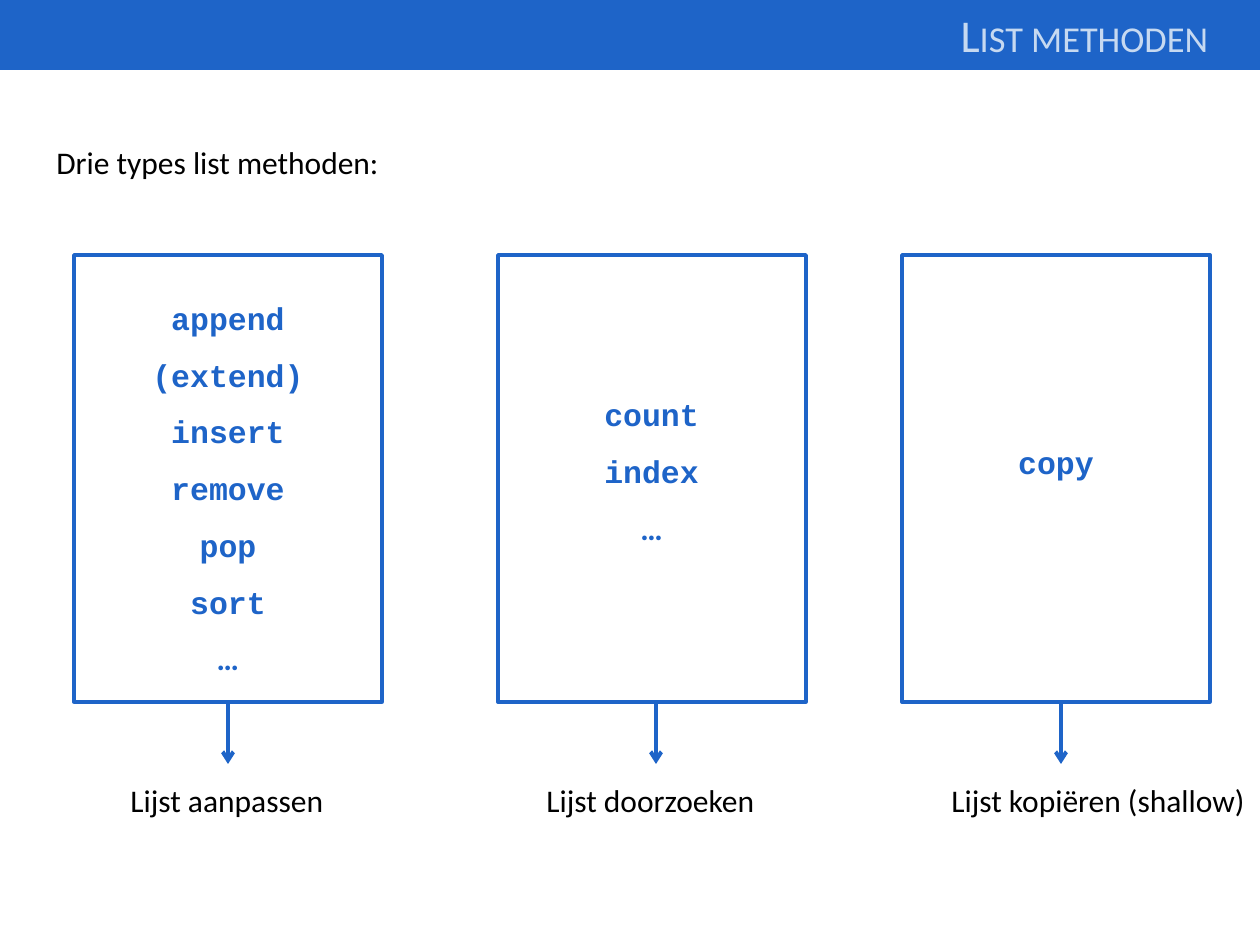
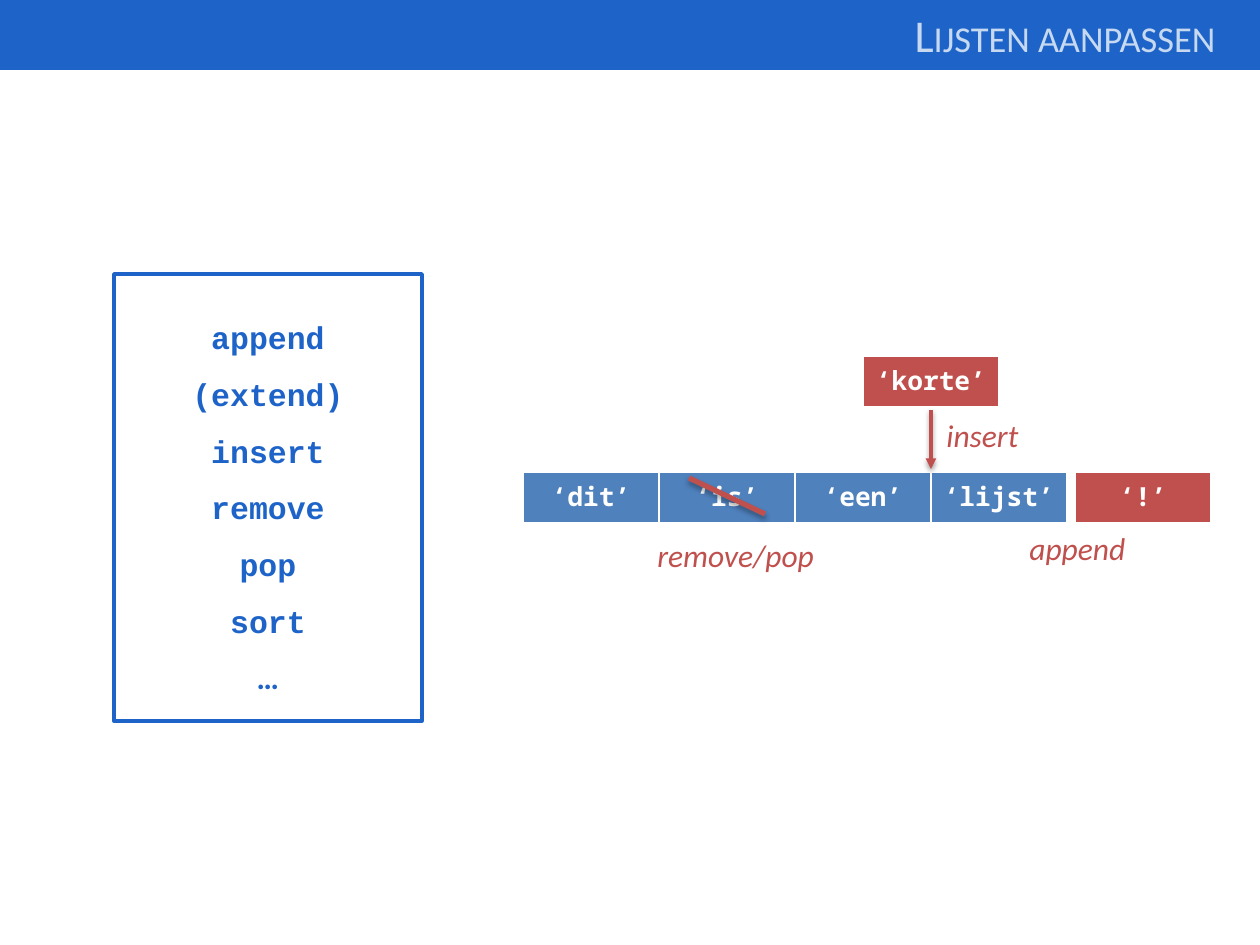
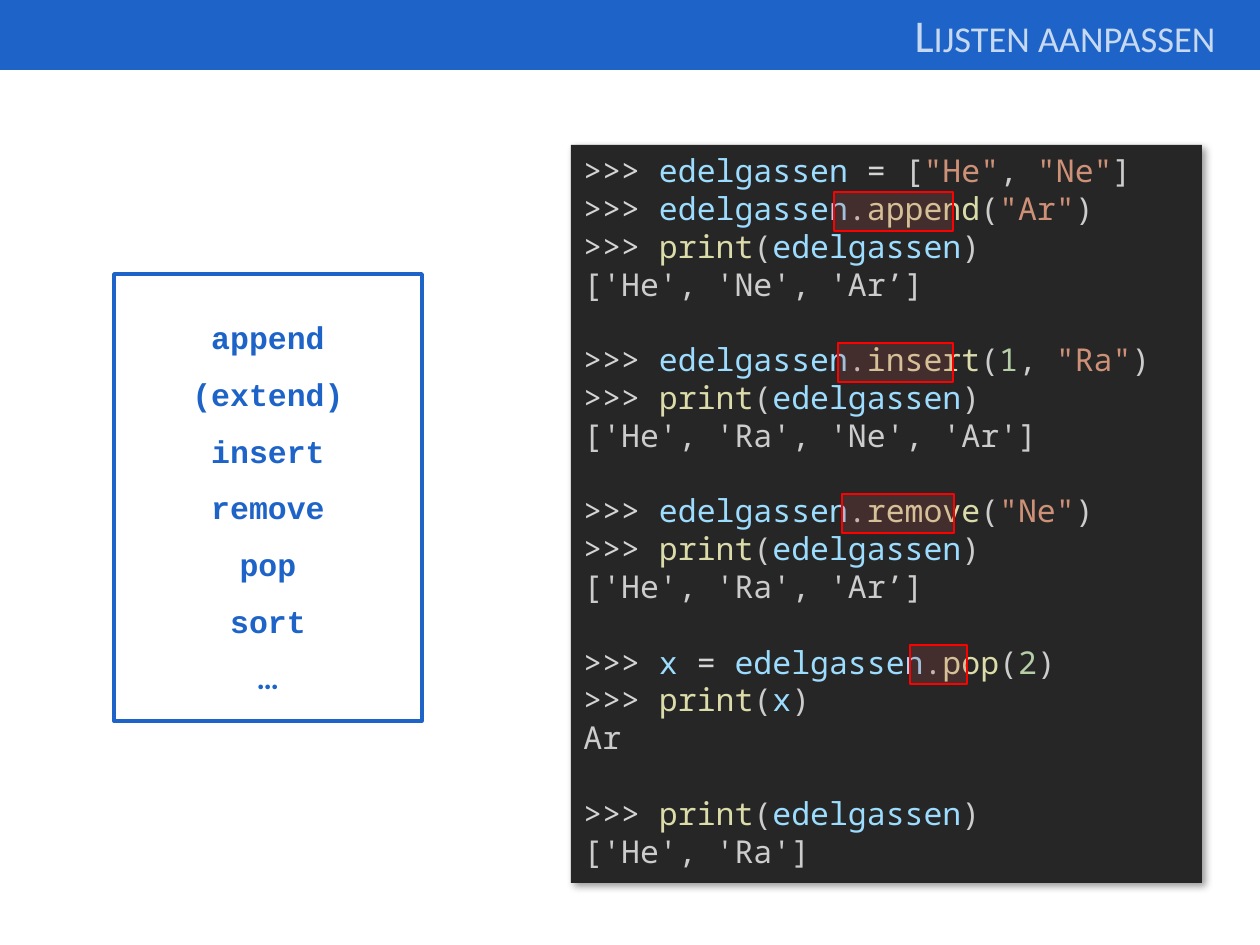
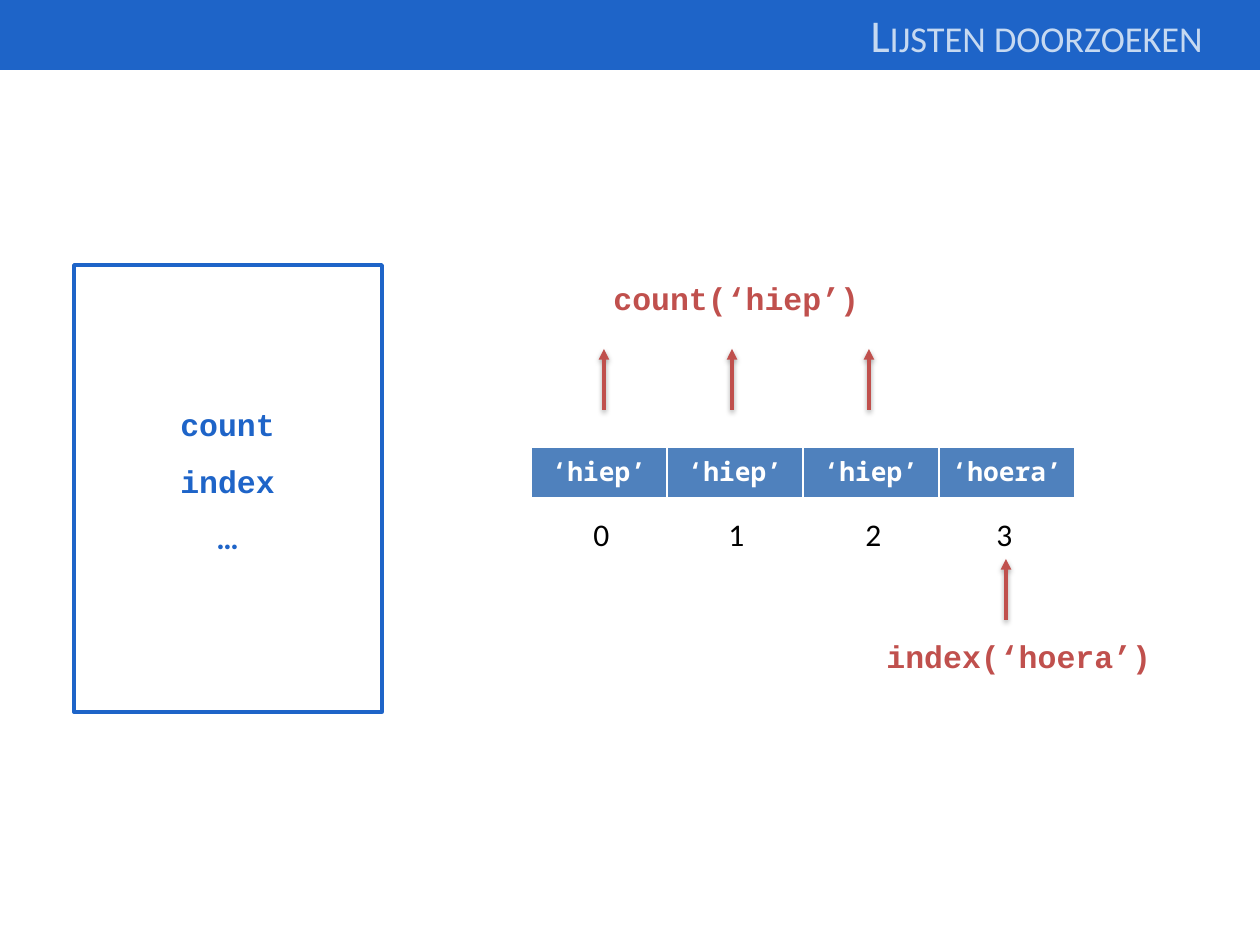
"""Builds four slides about Python list methods."""
from lxml.etree import SubElement
from pptx import Presentation
from pptx.dml.color import RGBColor
from pptx.enum.shapes import MSO_CONNECTOR, MSO_SHAPE
from pptx.enum.text import MSO_ANCHOR, MSO_AUTO_SIZE, PP_ALIGN
from pptx.oxml.ns import qn
from pptx.util import Emu, Pt

RECTANGLE = MSO_SHAPE.RECTANGLE
STRAIGHT = MSO_CONNECTOR.STRAIGHT
TOP = MSO_ANCHOR.TOP
FIT_SHAPE = MSO_AUTO_SIZE.SHAPE_TO_FIT_TEXT
NO_FIT = MSO_AUTO_SIZE.NONE
LEFT, CENTER = PP_ALIGN.LEFT, PP_ALIGN.CENTER

SCALE = 914400 / 126
SLIDE_WIDTH, SLIDE_HEIGHT = 1260, 945
TITLE_RIGHT = 1235
BOX_WIDTH, BOX_HEIGHT = 308, 447
CELL_WIDTH, CELL_HEIGHT = 136, 52
LABEL_HEIGHT = 50
BOTTOM_SITE = 2

BODY_FONT, METHOD_FONT, CODE_FONT = "Calibri", "Courier New", "Noto Sans Mono"
COLORS = {
    "blue": "1E64C8", "title": "C6D9F1", "black": "000000", "white": "FFFFFF",
    "cell": "4F81BD", "accent": "C0504D", "highlight": "FF0000", "panel": "262626",
    "prompt": "D4D4D4", "output": "CCCCCC", "variable": "9CDCFE",
    "function": "DCDCAA", "string": "CE9178", "number": "B5CEA8",
}
ARROW_SHADOW = {"alpha": 38, "blur": 3.1, "distance": 1.6, "angle": 90}
STRIKE_SHADOW = {"alpha": 35, "blur": 3.1, "distance": 1.8, "angle": 90}
PANEL_SHADOW = {"alpha": 40, "blur": 4, "distance": 3, "angle": 45}

ADAPT = {"names": ["append", "(extend)", "insert", "remove", "pop", "sort", "…"],
         "width": 178, "height": 407, "offset": 19}
SEARCH = {"names": ["count", "index", "…"], "width": 121, "height": 180, "offset": 115}
COPY = {"names": ["copy"], "width": 102, "height": 65, "offset": 163}


def px(length):
    """Turn whole pixels into EMU."""
    return Emu(round(length * SCALE))


def rgb(name):
    """Look up a colour by name."""
    return RGBColor.from_string(COLORS[name])


def write(frame, paragraphs, size=18, font=BODY_FONT, color="black", bold=False,
          italic=False, align=LEFT, line_spacing=None, around=0):
    """Write paragraphs, each a string or a list of (text, colour) runs."""
    for index, content in enumerate(paragraphs):
        paragraph = frame.add_paragraph() if index else frame.paragraphs[0]
        paragraph.alignment = align
        paragraph.line_spacing = line_spacing
        paragraph.space_before = paragraph.space_after = Pt(around)
        runs = [(content, color)] if isinstance(content, str) else content
        for text, run_color in runs:
            run = paragraph.add_run()
            run.text = text
            run.font.name = BODY_FONT if text == "…" else font
            run.font.size = Pt(size)
            run.font.bold = bold
            run.font.italic = italic
            run.font.color.rgb = rgb(run_color)


def set_shadow(shape, alpha, blur, distance, angle):
    """Put an outer shadow in the effect list of a shape."""
    effects = shape.element.spPr.find(qn("a:effectLst"))
    shadow = SubElement(effects, qn("a:outerShdw"), blurRad=str(Pt(blur)),
                        dist=str(Pt(distance)), dir=str(angle * 60000), rotWithShape="0")
    color = SubElement(shadow, qn("a:srgbClr"), val=COLORS["black"])
    SubElement(color, qn("a:alpha"), val=str(alpha * 1000))


def set_borders(cell):
    """Give a table cell white borders with a heavier bottom."""
    properties = cell._tc.get_or_add_tcPr()
    for side, width in (("L", 1), ("R", 1), ("T", 1), ("B", 3)):
        border = SubElement(properties, qn(f"a:ln{side}"), w=str(Pt(width)))
        fill = SubElement(border, qn("a:solidFill"))
        SubElement(fill, qn("a:srgbClr"), val=COLORS["white"])


class Deck:
    """Holds the presentation style and the current slide."""

    def __init__(self):
        """Start an empty presentation."""
        self.presentation = Presentation()
        self.presentation.slide_width = px(SLIDE_WIDTH)
        self.presentation.slide_height = px(SLIDE_HEIGHT)
        self.slide = None

    def add_slide(self, title, width):
        """Add a slide with the blue band and its title."""
        self.slide = self.presentation.slides.add_slide(self.presentation.slide_layouts[5])
        band = self.rectangle(0, 0, SLIDE_WIDTH, 68, fill="blue", line="blue")
        shape = self.slide.shapes.title
        shape.element.addprevious(band.element)
        shape.left, shape.top = px(TITLE_RIGHT - width), px(1)
        shape.width, shape.height = px(width), px(68)
        frame = shape.text_frame
        frame.vertical_anchor = TOP
        frame.auto_size = NO_FIT
        write(frame, [title], size=26, color="title")
        for properties in shape.element.iter(qn("a:rPr")):
            properties.set("cap", "small")

    def rectangle(self, left, top, width, height, fill=None, line=None, line_width=2,
                  alpha=None):
        """Add a rectangle without shadow."""
        shape = self.slide.shapes.add_shape(RECTANGLE, px(left), px(top), px(width), px(height))
        shape.shadow.inherit = False
        if fill:
            shape.fill.solid()
            shape.fill.fore_color.rgb = rgb(fill)
        else:
            shape.fill.background()
        if alpha:
            color = shape.element.spPr.find(qn("a:solidFill")).find(qn("a:srgbClr"))
            SubElement(color, qn("a:alpha"), val=str(alpha * 1000))
        if line:
            shape.line.color.rgb = rgb(line)
            shape.line.width = Pt(line_width)
        else:
            shape.line.fill.background()
        return shape

    def text(self, left, top, width, paragraphs, height=LABEL_HEIGHT, wrap=False, **style):
        """Add a text box."""
        shape = self.slide.shapes.add_textbox(px(left), px(top), px(width), px(height))
        shape.text_frame.word_wrap = wrap
        shape.text_frame.auto_size = FIT_SHAPE
        write(shape.text_frame, paragraphs, **style)

    def method_box(self, left, top, methods):
        """Add a framed list of method names."""
        width = methods["width"]
        self.text(left + (BOX_WIDTH - width) // 2, top + methods["offset"], width,
                  methods["names"], height=methods["height"], font=METHOD_FONT,
                  color="blue", bold=True, align=CENTER, line_spacing=1.5)
        return self.rectangle(left, top, BOX_WIDTH, BOX_HEIGHT, line="blue")

    def line(self, start, end, color="accent", width=2, head=None, shadow=None, source=None):
        """Add a straight line, joined to the bottom of a source if given."""
        connector = self.slide.shapes.add_connector(
            STRAIGHT, px(start[0]), px(start[1]), px(end[0]), px(end[1]))
        if source:
            connector.begin_connect(source, BOTTOM_SITE)
        connector.line.color.rgb = rgb(color)
        connector.line.width = Pt(width)
        properties = connector.element.spPr
        if head:
            SubElement(properties.find(qn("a:ln")), qn("a:tailEnd"), type=head)
        SubElement(properties, qn("a:effectLst"))
        if shadow:
            set_shadow(connector, **shadow)

    def accent_arrow(self, x, start, end):
        """Add a vertical red arrow."""
        self.line((x, start), (x, end), head="triangle", shadow=ARROW_SHADOW)

    def cells(self, left, top, words, fill="cell"):
        """Add a one-row table of list items."""
        table = self.slide.shapes.add_table(
            1, len(words), px(left), px(top), px(CELL_WIDTH * len(words)), px(CELL_HEIGHT)).table
        table.horz_banding = False
        for column, word in enumerate(words):
            table.columns[column].width = px(CELL_WIDTH)
            cell = table.cell(0, column)
            set_borders(cell)
            cell.fill.solid()
            cell.fill.fore_color.rgb = rgb(fill)
            write(cell.text_frame, [word], size=15, font=CODE_FONT, color="white",
                  bold=True, align=CENTER)

    def code(self, left, top, width, height, blocks):
        """Add a dark panel with blocks of code one line apart."""
        shape = self.rectangle(left, top, width, height, fill="panel")
        set_shadow(shape, **PANEL_SHADOW)
        frame = shape.text_frame
        frame.word_wrap = True
        frame.vertical_anchor = TOP
        write(frame, [line for block in blocks for line in block],
              font=CODE_FONT, color="output")
        first = 0
        for block in blocks[:-1]:
            first += len(block)
            frame.paragraphs[first].space_before = Pt(21.6)


PROMPT = (">>> ", "prompt")
GASES = ("edelgassen", "variable")
COMMA = (", ", "output")


def call(name, *arguments):
    """Return the runs of a function call."""
    return [(name, "function"), ("(", "output"), *arguments, (")", "output")]


def method_call(name, *arguments):
    """Return the runs of a method call on the list."""
    return [GASES, (".", "output"), *call(name, *arguments)]


def string(text):
    """Return the run of a quoted string."""
    return (f'"{text}"', "string")


def code_blocks():
    """Return the console session, block by block."""
    show = [PROMPT, *call("print", GASES)]
    assignment = [PROMPT, ("edelgassen ", "variable"), ("=", "prompt"), (" [", "output"),
                  string("He"), COMMA, string("Ne"), ("]", "output")]
    return [
        [assignment, [PROMPT, *method_call("append", string("Ar"))], show,
         "['He', 'Ne', 'Ar’]"],
        [[PROMPT, *method_call("insert", ("1", "number"), COMMA, string("Ra"))], show,
         "['He', 'Ra', 'Ne', 'Ar']"],
        [[PROMPT, *method_call("remove", string("Ne"))], show, "['He', 'Ra', 'Ar’]"],
        [[PROMPT, ("x ", "variable"), ("= ", "prompt"),
          *method_call("pop", ("2", "number"))],
         [PROMPT, *call("print", ("x", "variable"))], "Ar"],
        [show, "['He', 'Ra']"],
    ]


def overview_slide(deck):
    """Show the three types of list methods."""
    deck.add_slide("List methoden", 287)
    deck.text(44, 137, 1171, ["Drie types list methoden:"], wrap=True, around=3)
    top = 255
    bottom = top + BOX_HEIGHT
    columns = [
        (74, ADAPT, 228, 118, 221, "Lijst aanpassen"),
        (498, SEARCH, 656, 534, 236, "Lijst doorzoeken"),
        (902, COPY, 1061, 939, 323, "Lijst kopiëren (shallow)"),
    ]
    for left, methods, arrow_x, label_left, label_width, label in columns:
        box = deck.method_box(left, top, methods)
        centred = arrow_x == left + BOX_WIDTH // 2
        deck.line((arrow_x, bottom), (arrow_x, 764), color="blue", width=2.25,
                  head="arrow", source=box if centred else None)
        deck.text(label_left, 775, label_width, [label])


def adapt_slide(deck):
    """Start a slide on changing lists."""
    deck.add_slide("Lijsten aanpassen", 333)
    deck.method_box(114, 274, ADAPT)


def adapt_diagram_slide(deck):
    """Show how methods change a list."""
    adapt_slide(deck)
    deck.cells(523, 472, ["‘dit’", "‘is’", "‘een’", "‘lijst’"])
    deck.cells(1075, 472, ["‘!’"], fill="accent")
    deck.cells(863, 356, ["‘korte’"], fill="accent")
    deck.accent_arrow(931, 410, 469)
    deck.line((689, 478), (765, 514), width=3, shadow=STRIKE_SHADOW)
    for left, top, width, label in ((934, 410, 100, "insert"), (1017, 523, 122, "append"),
                                    (645, 530, 189, "remove/pop")):
        deck.text(left, top, width, [label], color="accent", italic=True)


def adapt_code_slide(deck):
    """Show a console session that changes a list."""
    adapt_slide(deck)
    deck.code(571, 145, 631, 738, code_blocks())
    for index, (left, width) in enumerate(((834, 119), (838, 115), (842, 112), (910, 57))):
        deck.rectangle(left, 192 + 151 * index, width, 39, fill="accent",
                       line="highlight", line_width=1.5, alpha=20)


def search_slide(deck):
    """Show how count and index search a list."""
    deck.add_slide("Lijsten doorzoeken", 377)
    deck.method_box(74, 265, SEARCH)
    deck.cells(531, 447, ["‘hiep’"] * 3 + ["‘hoera’"])
    for index, left in enumerate((581, 716, 853, 984)):
        deck.text(left, 509, 42, [str(index)])
    for x in (604, 732, 869):
        deck.accent_arrow(x, 410, 349)
    deck.accent_arrow(1006, 620, 559)
    for left, top, label in ((874, 631, "index(‘hoera’)"), (601, 273, "count(‘hiep’)")):
        deck.text(left, top, 295, [label], wrap=True, font=METHOD_FONT,
                  color="accent", bold=True)


def main():
    """Build and save the slides."""
    deck = Deck()
    overview_slide(deck)
    adapt_diagram_slide(deck)
    adapt_code_slide(deck)
    search_slide(deck)
    deck.presentation.save("out.pptx")


if __name__ == "__main__":
    main()
